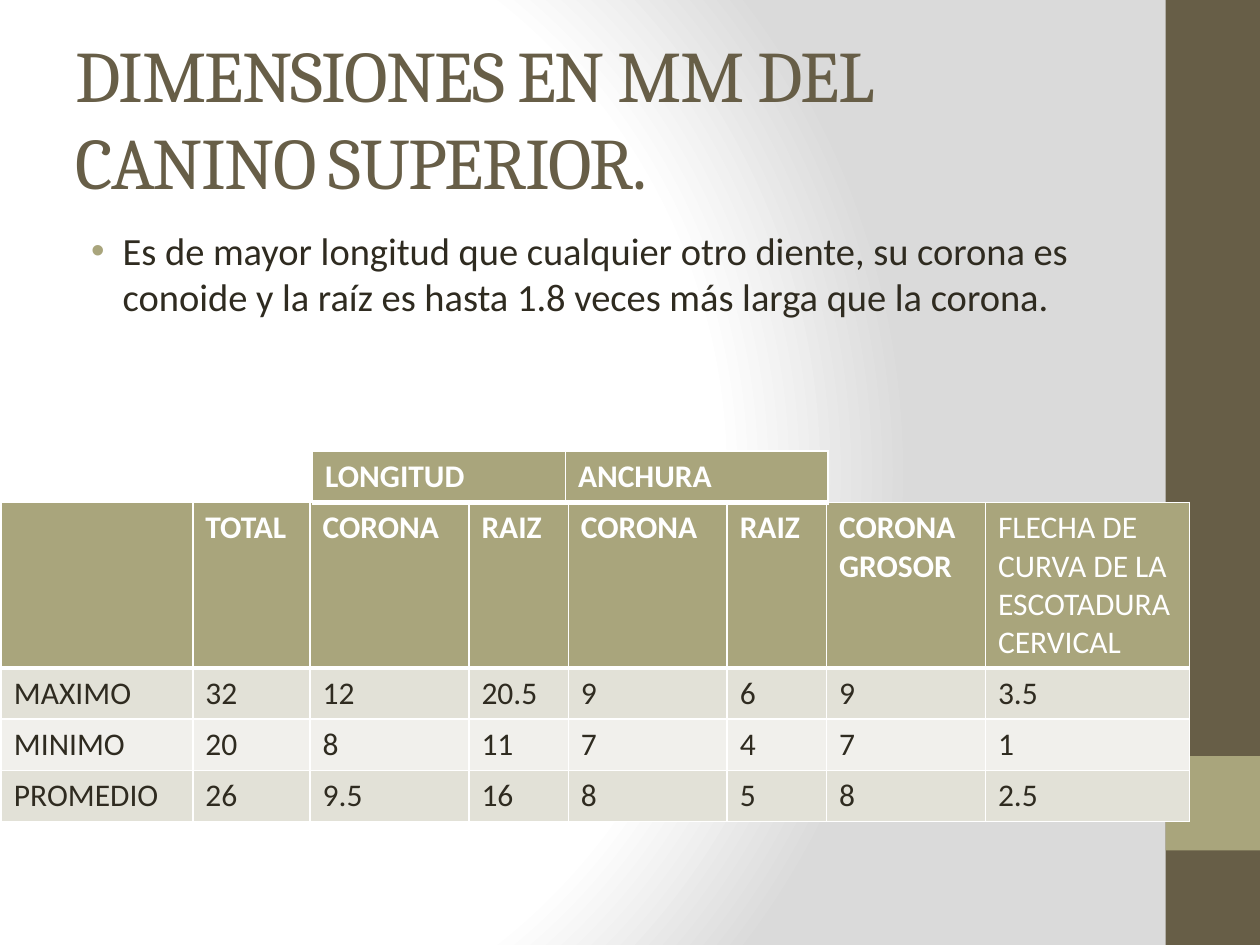
import pptx
import pptx.util
import pptx.dml.color
import pptx.enum.shapes
import pptx.enum.text
import pptx.oxml
import pptx.oxml.ns
from lxml import etree

Pt = pptx.util.Pt
RGB = pptx.dml.color.RGBColor
BROWN = RGB(0x67, 0x5E, 0x47)
OLIVE = RGB(0xA9, 0xA5, 0x7C)
INK = RGB(0x2F, 0x2B, 0x20)
WHITE = RGB(0xFF, 0xFF, 0xFF)
GREY = RGB(0xDA, 0xDA, 0xDA)
BANDS = [RGB(0xE2, 0xE1, 0xD7), RGB(0xF1, 0xF0, 0xEC)]

TITLE = {"name": "Cambria", "size": Pt(41.4), "color": BROWN}
BODY = {"name": "Calibri", "size": Pt(22), "color": INK}
HEAD = {"name": "Calibri", "size": Pt(18), "color": WHITE, "bold": True}
LIGHT = {**HEAD, "bold": False}
DATA = {**LIGHT, "color": INK}

SIZES = [
    ["", "TOTAL", "CORONA", "RAIZ", "CORONA", "RAIZ", "CORONA\nGROSOR",
     "FLECHA DE\nCURVA DE LA\nESCOTADURA\nCERVICAL"],
    ["MAXIMO", "32", "12", "20.5", "9", "6", "9", "3.5"],
    ["MINIMO", "20", "8", "11", "7", "4", "7", "1"],
    ["PROMEDIO", "26", "9.5", "16", "8", "5", "8", "2.5"],
]
GROUPS = [["LONGITUD", "ANCHURA"]]


def sub(node, tag, **attrs):
    return etree.SubElement(node, pptx.oxml.ns.qn(tag), **attrs)


def paint(slide):
    """Give the slide a radial white to grey background."""
    fill = slide.background.fill
    fill.gradient()
    grad = slide.background._cSld.find(".//" + pptx.oxml.ns.qn("a:gradFill"))
    for child in list(grad):
        grad.remove(child)
    stops = sub(grad, "a:gsLst")
    for pos, color in [(0, WHITE), (75, WHITE), (100, GREY)]:
        stop = sub(stops, "a:gs", pos=str(pos * 1000))
        sub(stop, "a:srgbClr", val=str(color))
    focus = sub(grad, "a:path", path="circle")
    sub(focus, "a:fillToRect", l="20000", t="50000", r="100000", b="50000")


def block(slide, box, color):
    shape = slide.shapes.add_shape(
        pptx.enum.shapes.MSO_SHAPE.RECTANGLE, *map(Pt, box))
    shape.shadow.inherit = False
    shape.fill.solid()
    shape.fill.fore_color.rgb = color
    shape.line.fill.background()


def style(font, form):
    for key, value in form.items():
        if key == "color":
            font.color.rgb = value
        else:
            setattr(font, key, value)


def write(frame, text, form):
    frame.text = text
    for para in frame.paragraphs:
        style(para.font, form)
        for run in para.runs:
            style(run.font, form)


def label(slide, box, text, form, anchor):
    shape = slide.shapes.add_textbox(*map(Pt, box))
    frame = shape.text_frame
    frame.word_wrap = True
    frame.vertical_anchor = anchor
    write(frame, text, form)
    return frame.paragraphs[0]


def dot(para):
    """Turn a paragraph into a bullet point with a hanging indent."""
    para.space_before = Pt(4.4)
    props = para._p.get_or_add_pPr()
    props.set("marL", str(Pt(27)))
    props.set("indent", str(Pt(-18)))
    spot = [
        pptx.oxml.parse_xml(
            f'<a:buClr {pptx.oxml.ns.nsdecls("a")}>'
            f'<a:srgbClr val="{OLIVE}"/></a:buClr>'),
        pptx.oxml.parse_xml(
            f'<a:buFont {pptx.oxml.ns.nsdecls("a")} typeface="Arial"/>'),
        pptx.oxml.parse_xml(
            f'<a:buChar {pptx.oxml.ns.nsdecls("a")} char="•"/>'),
    ]
    place = 1 + props.index(props.find(pptx.oxml.ns.qn("a:spcBef")))
    props[place:place] = spot


def edge(cell, top, base):
    """Draw white borders, with the given top and bottom widths."""
    props = cell._tc.get_or_add_tcPr()
    for spot, (side, width) in enumerate(
            [("L", 1), ("R", 1), ("T", top), ("B", base)]):
        line = sub(props, f"a:ln{side}", w=str(Pt(width)))
        sub(sub(line, "a:solidFill"), "a:srgbClr", val=str(WHITE))
        props.insert(spot, line)


def grid(slide, left, top, cols, rows, texts):
    """Add a table whose first row is the header."""
    frame = slide.shapes.add_table(
        len(rows), len(cols), *map(Pt, (left, top, sum(cols), sum(rows))))
    table = frame.table
    for col, width in zip(table.columns, cols):
        col.width = Pt(width)
    for row, height in zip(table.rows, rows):
        row.height = Pt(height)
    for r, line in enumerate(texts):
        for c, text in enumerate(line):
            cell = table.cell(r, c)
            form = DATA if r else LIGHT if c == 7 else HEAD
            write(cell.text_frame, text, form)
            cell.fill.solid()
            cell.fill.fore_color.rgb = BANDS[(r - 1) % 2] if r else OLIVE
            edge(cell, 3 if r == 1 else 1, 1 if r else 3)


def main():
    deck = pptx.Presentation()
    deck.slide_width, deck.slide_height = Pt(720), Pt(540)
    slide = deck.slides.add_slide(deck.slide_layouts[6])
    paint(slide)
    block(slide, (666, 0, 54, 540), BROWN)
    block(slide, (666, 432, 54, 54), OLIVE)

    anchor = pptx.enum.text.MSO_ANCHOR
    title = label(slide, (36, 21.6, 600, 90),
                  "DIMENSIONES EN MM DEL CANINO SUPERIOR.", TITLE,
                  anchor.MIDDLE)
    title.runs[0].font._element.set("spc", "-100")
    dot(label(slide, (36, 126, 600, 378),
              "Es de mayor longitud que cualquier otro diente, su corona es "
              "conoide y la raíz es hasta 1.8 veces más larga que la corona.",
              BODY, anchor.TOP))

    grid(slide, 0.8, 287, [109.4, 67, 90.8, 56.8, 90.8, 56.8, 90.8, 116.6],
         [94.8, 29.2, 29.2, 29.2], SIZES)
    grid(slide, 178.6, 257.8, [144.5, 150.2], [29.2], GROUPS)
    deck.save("out.pptx")


if __name__ == "__main__":
    main()
